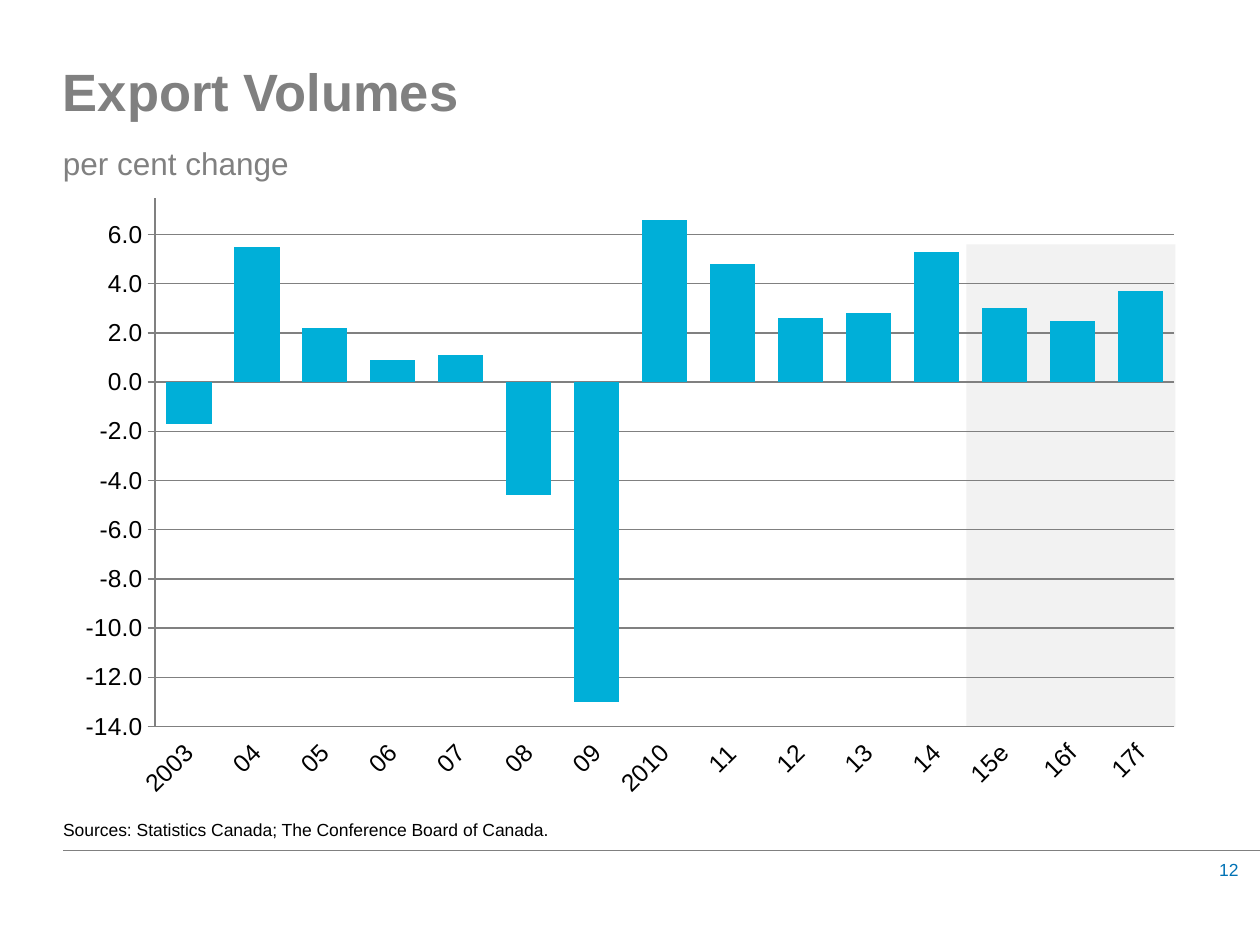
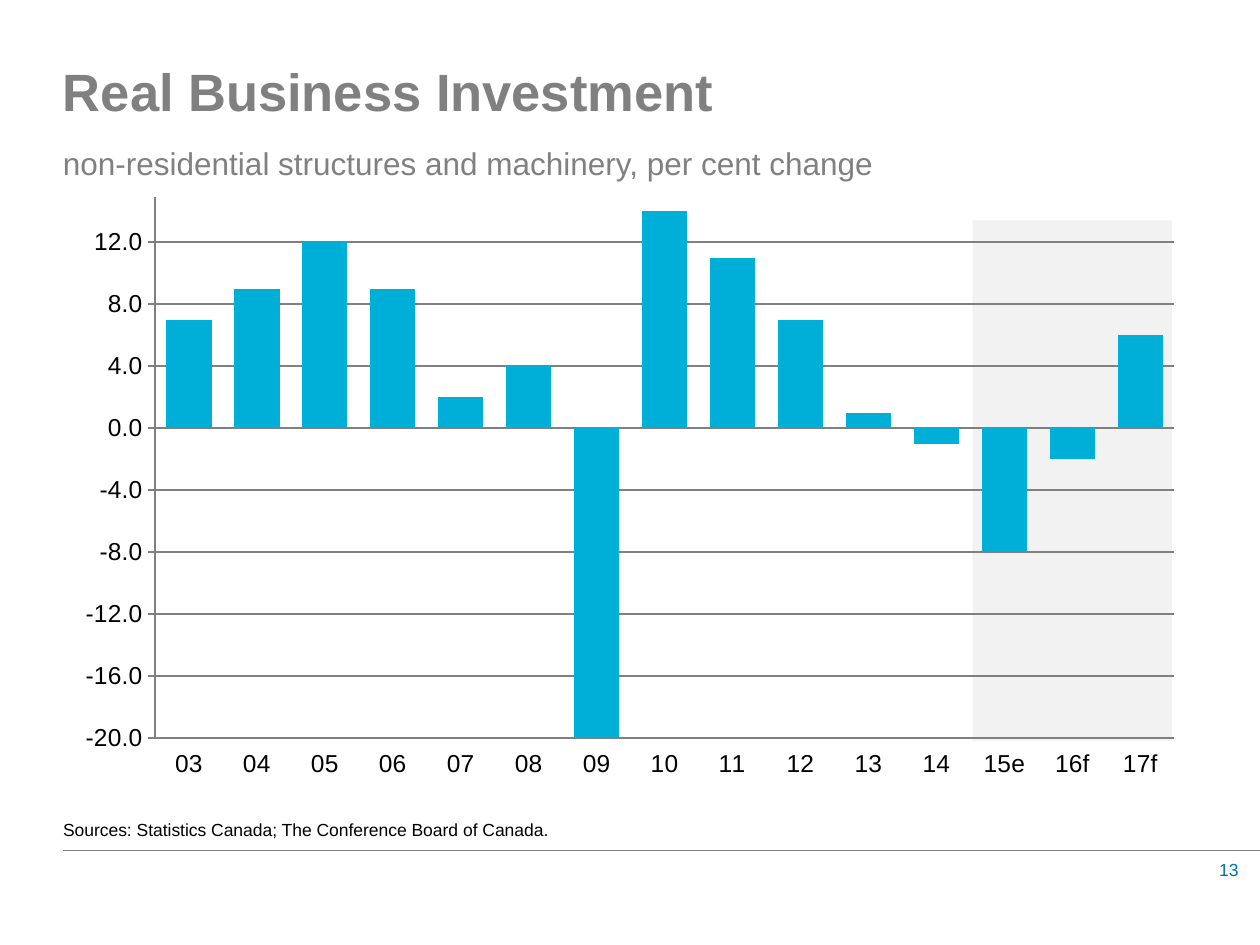
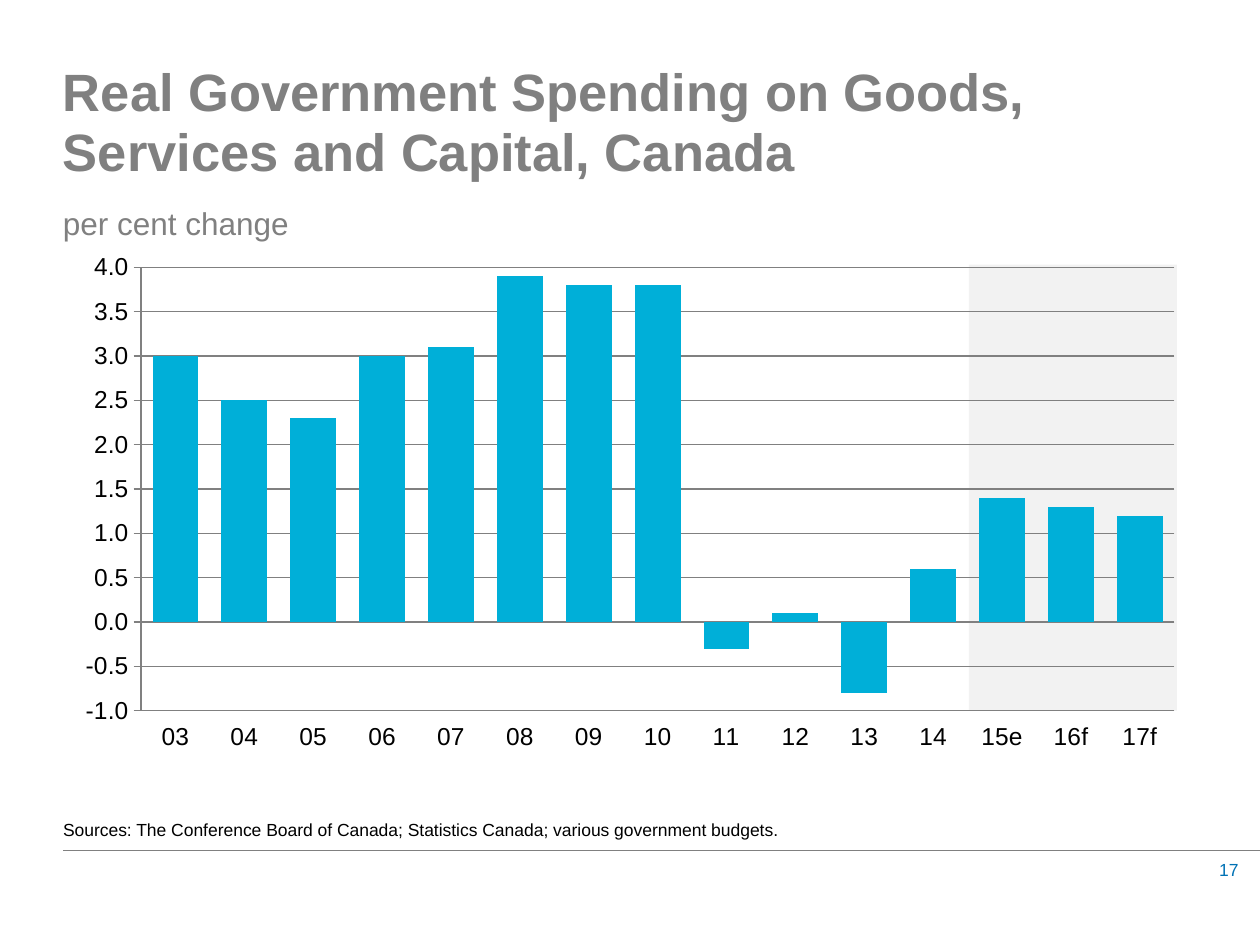
"""Builds three economic outlook slides with column charts."""
from lxml import etree
from pptx import Presentation
from pptx import util as u
from pptx.chart import data
from pptx.dml.color import RGBColor
from pptx.enum import chart as ch, shapes, text
from pptx.oxml import ns

GRAY = RGBColor(0x80, 0x80, 0x80)
BAND = RGBColor(0xF2, 0xF2, 0xF2)
CYAN = RGBColor(0x00, 0xAF, 0xD8)
BLUE = RGBColor(0x00, 0x72, 0xB5)
BLACK = RGBColor(0, 0, 0)
FONT = "Arial"
MARGIN = 0.5
CONTENT_WIDTH = 9
SHORT_YEARS = [f"{year:02}" for year in range(3, 15)] + ["15e", "16f", "17f"]
LONG_YEARS = [{"03": "2003", "10": "2010"}.get(year, year) for year in SHORT_YEARS]
STATISTICS_SOURCE = "Sources: Statistics Canada; The Conference Board of Canada."

OUTLOOKS = [
    dict(title="Export Volumes", subtitle="per cent change", page=12,
         source=STATISTICS_SOURCE, years=LONG_YEARS, tilt=-45,
         changes=[-1.7, 5.5, 2.2, 0.9, 1.1, -4.6, -13, 6.6, 4.8, 2.6, 2.8, 5.3, 3, 2.5, 3.7],
         scale=(-14, 7.5, 2), chart_top=1.47, chart_height=4.96,
         forecast=(7.67, 1.94, 1.66, 3.83)),
    dict(title="Real Business Investment",
         subtitle="non-residential structures and machinery, per cent change", page=13,
         source=STATISTICS_SOURCE, years=SHORT_YEARS, tilt=0,
         changes=[7, 9, 12, 9, 2, 4, -20, 14, 11, 7, 1, -1, -8, -2, 6],
         scale=(-20, 14.9, 4), chart_top=1.47, chart_height=4.8,
         forecast=(7.72, 1.75, 1.58, 4.13)),
    dict(title="Real Government Spending on Goods, Services and Capital, Canada",
         subtitle="per cent change", page=17,
         source="Sources: The Conference Board of Canada; Statistics Canada; "
                "various government budgets.",
         years=SHORT_YEARS, tilt=0,
         changes=[3, 2.5, 2.3, 3, 3.1, 3.9, 3.8, 3.8, -0.3, 0.1, -0.8, 0.6, 1.4, 1.3, 1.2],
         scale=(-1, 4, 0.5), chart_top=1.93, chart_height=4.11,
         forecast=(7.69, 2.1, 1.65, 3.54)),
]


def inches(*lengths):
    """Convert several lengths to Inches."""
    return [u.Inches(length) for length in lengths]


def style_font(font, size, color, bold=False):
    """Set the shared typeface with a size, colour and weight."""
    font.name, font.size, font.bold = FONT, u.Pt(size), bold
    font.color.rgb = color


def style_line(line):
    """Give a line the thin gray rule style."""
    line.color.rgb = GRAY
    line.width = u.Pt(0.75)


def add_text(slide, box, lines, align=text.PP_ALIGN.LEFT, spacing=None):
    """Add a text box with one paragraph per (wording, size, colour, bold)."""
    frame = slide.shapes.add_textbox(*inches(*box)).text_frame
    frame.word_wrap = True
    frame.margin_left = frame.margin_top = frame.margin_right = frame.margin_bottom = 0
    frame.text = "\n".join(line[0] for line in lines)
    for paragraph, (_, size, color, bold) in zip(frame.paragraphs, lines):
        paragraph.alignment = align
        paragraph.line_spacing = spacing
        for run in paragraph.runs:
            style_font(run.font, size, color, bold)


def add_heading(slide, title, subtitle):
    """Add the bold title with its subtitle below."""
    add_text(slide, (MARGIN, 0.5, CONTENT_WIDTH, 0.97),
             [(title, 30, GRAY, True), (subtitle, 18, GRAY, False)], spacing=u.Pt(34))


def add_footer(slide, source, page):
    """Add the source line, the rule and the page number."""
    add_text(slide, (MARGIN, 6.5, 8.88, 0.25), [(source, 10, BLACK, False)])
    rule = slide.shapes.add_connector(
        shapes.MSO_CONNECTOR.STRAIGHT, *inches(MARGIN, 6.75, 10, 6.75))
    style_line(rule.line)
    etree.SubElement(rule._element.spPr, ns.qn("a:effectLst"))
    add_text(slide, (9.5, 6.82, 0.33, 0.17), [(str(page), 10, BLUE, False)],
             align=text.PP_ALIGN.RIGHT)


def add_forecast_band(slide, box):
    """Shade the forecast years behind the chart."""
    band = slide.shapes.add_shape(shapes.MSO_SHAPE.RECTANGLE, *inches(*box))
    band.shadow.inherit = False
    band.fill.solid()
    band.fill.fore_color.rgb = BAND
    band.line.fill.background()


def add_change_chart(slide, years, changes, scale, top, height, tilt):
    """Add the column chart of yearly per cent changes."""
    yearly = data.CategoryChartData(number_format="#,##0.0")
    yearly.categories = years
    yearly.add_series("Series 1", changes)
    chart = slide.shapes.add_chart(
        ch.XL_CHART_TYPE.COLUMN_CLUSTERED,
        *inches(MARGIN, top, CONTENT_WIDTH, height), yearly).chart
    style_font(chart.font, 18, BLACK)
    chart.has_legend = chart.has_title = False
    plot = chart.plots[0]
    plot.gap_width = 50
    plot.vary_by_categories = False
    columns = plot.series[0]
    columns.invert_if_negative = False
    columns.format.fill.solid()
    columns.format.fill.fore_color.rgb = CYAN

    for axis in (chart.category_axis, chart.value_axis):
        style_font(axis.tick_labels.font, 14, BLACK)
        style_line(axis.format.line)
        axis.minor_tick_mark = ch.XL_TICK_MARK.NONE
    year_axis, change_axis = chart.category_axis, chart.value_axis
    year_axis.tick_label_position = ch.XL_TICK_LABEL_POSITION.LOW
    year_axis.major_tick_mark = ch.XL_TICK_MARK.NONE
    year_axis.tick_labels.font._element.getparent().getparent().getparent().find(
        ns.qn("a:bodyPr")).set("rot", str(tilt * 60000))

    change_axis.minimum_scale, change_axis.maximum_scale, change_axis.major_unit = scale
    change_axis.major_tick_mark = ch.XL_TICK_MARK.OUTSIDE
    change_axis.tick_labels.number_format = "#,##0.0"
    change_axis.tick_labels.number_format_is_linked = False
    change_axis.has_major_gridlines = True
    style_line(change_axis.major_gridlines.format.line)


def add_outlook_slide(deck, outlook):
    """Add one slide with heading, forecast band, chart and footer."""
    slide = deck.slides.add_slide(deck.slide_layouts[6])
    add_forecast_band(slide, outlook["forecast"])
    add_change_chart(slide, outlook["years"], outlook["changes"], outlook["scale"],
                     outlook["chart_top"], outlook["chart_height"], outlook["tilt"])
    add_heading(slide, outlook["title"], outlook["subtitle"])
    add_footer(slide, outlook["source"], outlook["page"])


def main():
    """Build and save the deck."""
    deck = Presentation()
    deck.slide_width, deck.slide_height = inches(10, 7.5)
    for outlook in OUTLOOKS:
        add_outlook_slide(deck, outlook)
    deck.save("out.pptx")


if __name__ == "__main__":
    main()
